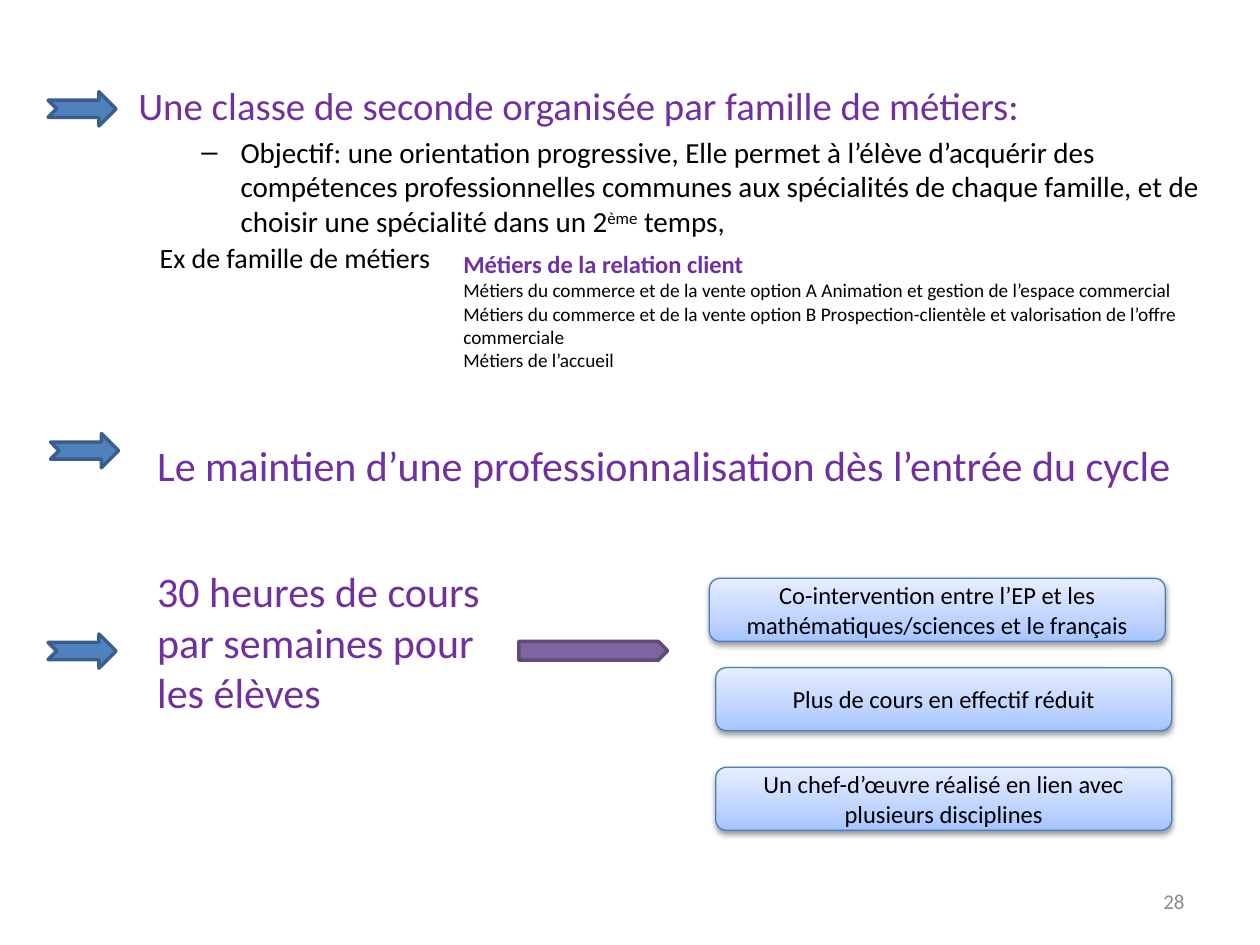
import pptx
import pptx.util
import pptx.dml.color
import pptx.enum.shapes
import pptx.enum.text
import pptx.oxml
import pptx.oxml.ns

Cm, Pt = pptx.util.Cm, pptx.util.Pt
SHAPE = pptx.enum.shapes.MSO_SHAPE
ANCHOR = pptx.enum.text.MSO_ANCHOR
ALIGN = pptx.enum.text.PP_ALIGN
NAMESPACE = pptx.oxml.ns.nsdecls("a")
PURPLE, BLACK, GREY = "7030A0", "000000", "8C8C8C"


def color(value):
    return pptx.dml.color.RGBColor.from_string(value)


def write(box, paragraphs, anchor=ANCHOR.TOP, align=ALIGN.LEFT):
    """Fill a box with (text, size, hex colour, bold) paragraphs."""
    frame = box.text_frame
    frame.word_wrap = True
    frame.vertical_anchor = anchor
    for index, (text, size, shade, bold) in enumerate(paragraphs):
        para = frame.paragraphs[0] if index == 0 else frame.add_paragraph()
        para.alignment = align
        for part_index, part in enumerate(text.split("^")):
            span = para.add_run()
            span.text = part
            formats = {"name": "Calibri", "size": Pt(size), "bold": bold}
            for key, value in formats.items():
                setattr(span.font, key, value)
            span.font.color.rgb = color(shade)
            # Text between two carets is superscript
            if part_index % 2:
                span.font._element.set("baseline", "30000")


deck = pptx.Presentation()
deck.slide_width, deck.slide_height = Cm(25.4), Cm(19.05)
page = deck.slides.add_slide(deck.slide_layouts[6])

# Text boxes: left, top, width, height in cm, then paragraphs
texts = {
    "objective": ((2.54, 1.52, 22.86, 3.2), [
        ("Une classe de seconde organisée par famille de métiers:", 22.2, PURPLE, False),
        ("Objectif: une orientation progressive, Elle permet à l’élève d’acquérir des "
         "compétences professionnelles communes aux spécialités de chaque famille, et de "
         "choisir une spécialité dans un 2^ème^ temps,", 16.6, BLACK, False)]),
    "families": ((9.09, 4.9, 15.19, 2.74), [
        ("Métiers de la relation client", 14, PURPLE, True),
        ("Métiers du commerce et de la vente option A Animation et gestion de "
         "l’espace commercial", 11, BLACK, False),
        ("Métiers du commerce et de la vente option B Prospection-clientèle et "
         "valorisation de l’offre commerciale", 11, BLACK, False),
        ("Métiers de l’accueil", 11, BLACK, False)]),
    "example": ((2.97, 4.72, 6.45, 0.94), [
        ("Ex de famille de métiers", 16, BLACK, False)]),
    "training": ((2.92, 8.74, 22, 1.27), [
        ("Le maintien d’une professionnalisation dès l’entrée du cycle",
         24, PURPLE, False)]),
    "hours": ((2.92, 11.28, 7.01, 4.37), [
        ("30 heures de cours par semaines pour les élèves", 24, PURPLE, False)]),
}
boxes = {}
for name, (place, paragraphs) in texts.items():
    boxes[name] = page.shapes.add_textbox(*map(Cm, place))
    write(boxes[name], paragraphs)

# Dash bullet and hanging indent for the objective
bullet_para = boxes["objective"].text_frame.paragraphs[1]
bullet_para.space_before = Pt(3.3)
properties = bullet_para._p.get_or_add_pPr()
for key, value in {"marL": Cm(2.06), "indent": -Cm(0.79)}.items():
    properties.set(key, str(int(value)))
properties.append(pptx.oxml.parse_xml(f'<a:buFont {NAMESPACE} typeface="Arial"/>'))
properties.append(pptx.oxml.parse_xml(f'<a:buChar {NAMESPACE} char="–"/>'))

# Page number
number = page.shapes.add_textbox(Cm(18.21), Cm(17.65), Cm(5.92), Cm(1.02))
write(number, [("28", 12, GREY, False)], ANCHOR.MIDDLE, ALIGN.RIGHT)

# Blue arrows beside each point, and the purple link
arrows = [(SHAPE.NOTCHED_RIGHT_ARROW, (left, top, 1.37, 0.69), "4F81BD", "3A5F8C")
          for left, top in ((0.97, 1.85), (1.02, 8.74), (0.97, 12.78))]
arrows.append((SHAPE.PENTAGON, (10.46, 12.93, 3, 0.38), "8064A2", "5F4A78"))
for kind, place, fill, line in arrows:
    arrow = page.shapes.add_shape(kind, *map(Cm, place))
    arrow.shadow.inherit = False
    arrow.fill.solid()
    arrow.fill.fore_color.rgb = color(fill)
    arrow.line.color.rgb = color(line)
    arrow.line.width = Pt(2)

# Gradient cards with a soft shadow
cards = [
    (14.3, 11.66, "Co-intervention entre l’EP et les mathématiques/sciences et le français"),
    (14.43, 13.46, "Plus de cours en effectif réduit"),
    (14.43, 15.47, "Un chef-d’œuvre réalisé en lien avec plusieurs disciplines"),
]
gradient_stops = ((0, "A4C4FF"), (35, "BFD4FF"), (100, "E6EEFF"))
for left, top, text in cards:
    card = page.shapes.add_shape(
        SHAPE.ROUNDED_RECTANGLE, Cm(left), Cm(top), Cm(9.19), Cm(1.27))
    card.line.color.rgb = color("4B7EBC")
    card.line.width = Pt(0.75)
    card.fill.gradient()
    card.fill.gradient_angle = 90
    stop_list = card._element.spPr.find(".//" + pptx.oxml.ns.qn("a:gsLst"))
    for stop in list(stop_list):
        stop_list.remove(stop)
    for position, shade in gradient_stops:
        stop_list.append(pptx.oxml.parse_xml(
            f'<a:gs {NAMESPACE} pos="{position * 1000}"><a:srgbClr val="{shade}"/></a:gs>'))
    card.shadow.inherit = False
    effects = card._element.spPr.find(pptx.oxml.ns.qn("a:effectLst"))
    effects.append(pptx.oxml.parse_xml(
        f'<a:outerShdw {NAMESPACE} blurRad="{Pt(3.1)}" dist="{Pt(1.6)}" dir="5400000" '
        'rotWithShape="0"><a:srgbClr val="000000"><a:alpha val="38000"/></a:srgbClr>'
        '</a:outerShdw>'))
    write(card, [(text, 14, BLACK, False)], ANCHOR.MIDDLE, ALIGN.CENTER)

deck.save("out.pptx")
